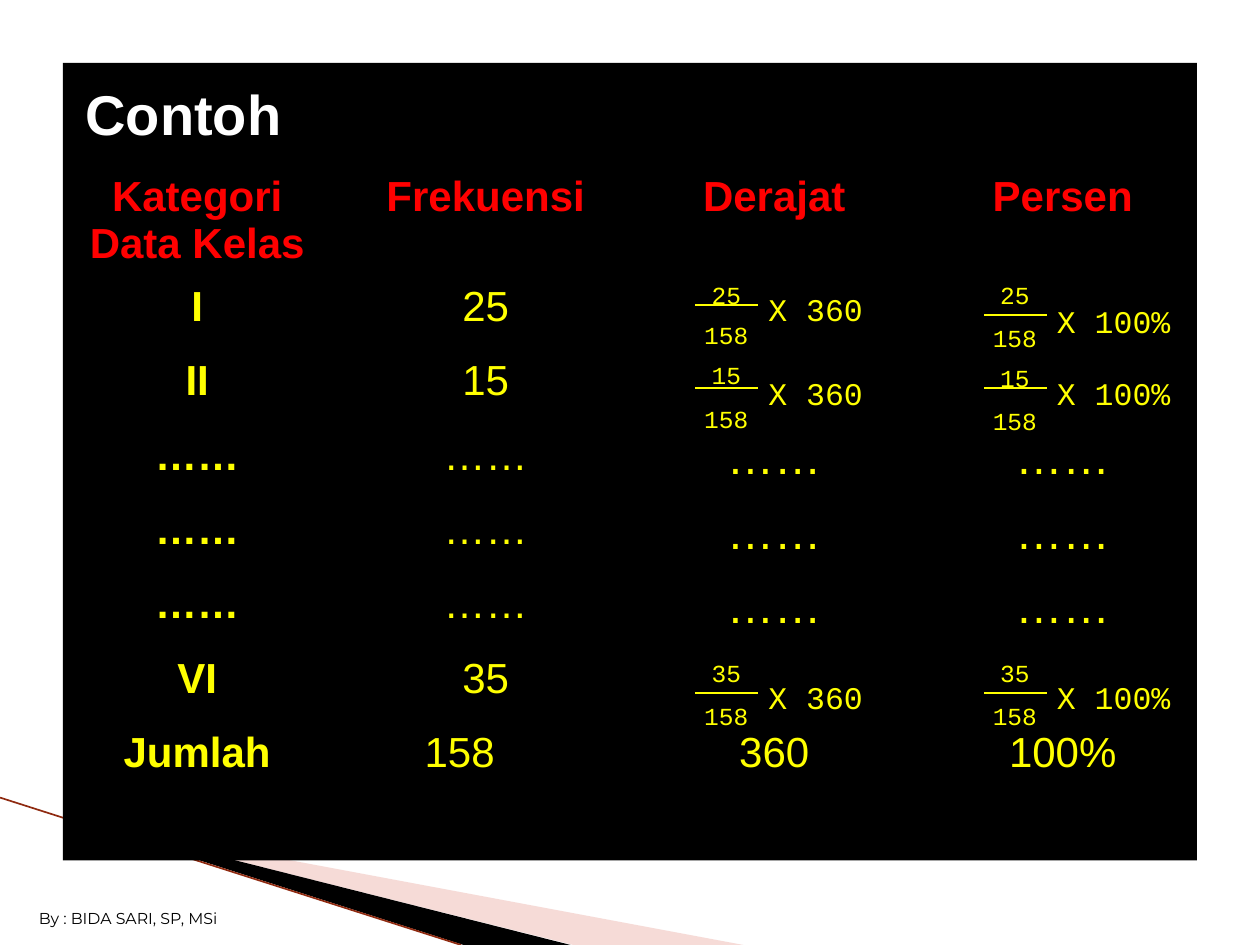
from dataclasses import dataclass

from lxml.etree import SubElement
from pptx import Presentation
from pptx.dml.color import RGBColor
from pptx.enum.shapes import MSO_CONNECTOR, MSO_SHAPE
from pptx.enum.text import PP_ALIGN
from pptx.oxml.ns import qn
from pptx.util import Emu, Inches, Pt

SLIDE_WIDTH, SLIDE_HEIGHT = Inches(10), Inches(7.5)
GRID_COLUMNS, GRID_ROWS = 10, 7.5
TABLE_LEFT, TABLE_TOP = 0.42, 1.33
TABLE_COLUMN, HEADER_ROW, BODY_ROW = 2.29, 0.87, 0.59
BLACK, WHITE, RED, YELLOW = "000000", "FFFFFF", "FF0000", "FFFF00"
NO_TABLE_STYLE = "{2D5ABB26-0587-4C30-8999-92F81FD0307C}"


@dataclass(frozen=True)
class TextStyle:
    size: float
    color: str
    font: str = "Arial"
    bold: bool = False
    align: PP_ALIGN = PP_ALIGN.LEFT
    space_before: float = 0


@dataclass(frozen=True)
class Fraction:
    column: int
    numerator: str
    factor: str
    top: float
    rule: float
    factor_top: float
    factor_width: float
    gap: float = 8


@dataclass(frozen=True)
class Wedge:
    points: tuple[tuple[float, float], ...]
    color: str
    opacity: int = 100


DOTS = "……"
ROWS = [
    ("Kategori Data Kelas", "Frekuensi", "Derajat", "Persen"),
    ("I", "25", "", ""),
    ("II", "15", "", ""),
    *[(DOTS,) * 4] * 3,
    ("VI", "35", "", ""),
    ("Jumlah", "158", "360", "100%"),
]
FRACTIONS = [
    Fraction(2, "25", "X 360", 2.17, 2.42, 2.25, 1, 6),
    Fraction(2, "15", "X 360", 2.81, 3.08, 2.92, 1),
    Fraction(2, "35", "X 360", 5.17, 5.5, 5.33, 1),
    Fraction(3, "25", "X 100%", 2.17, 2.5, 2.35, 1.3),
    Fraction(3, "15", "X 100%", 2.83, 3.08, 2.92, 1.3),
    Fraction(3, "35", "X 100%", 5.17, 5.5, 5.33, 1.3),
]
WEDGES = [
    Wedge(((0.55, 6.5), (5.9, 7.5), (4.55, 7.5)), "E9A59D", 40),
    Wedge(((0.53, 6.49), (4.53, 7.5), (3.68, 7.5)), BLACK),
]


def across(columns: float) -> Emu:
    return Emu(round(SLIDE_WIDTH * columns / GRID_COLUMNS))


def down(rows: float) -> Emu:
    return Emu(round(SLIDE_HEIGHT * rows / GRID_ROWS))


def rgb(color: str) -> RGBColor:
    return RGBColor.from_string(color)


def write(text_frame, lines: list[str], style: TextStyle) -> None:
    for index, line in enumerate(lines):
        paragraph = text_frame.add_paragraph() if index else text_frame.paragraphs[0]
        paragraph.alignment = style.align
        if index:
            paragraph.space_before = Pt(style.space_before)
        run = paragraph.add_run()
        run.text = line
        run.font.size = Pt(style.size)
        run.font.name = style.font
        run.font.bold = style.bold
        run.font.color.rgb = rgb(style.color)


def add_text(slide, left: float, top: float, width: float, height: float,
             lines: list[str], style: TextStyle, wrap: bool = True) -> None:
    shape = slide.shapes.add_textbox(across(left), down(top), across(width), down(height))
    shape.text_frame.word_wrap = wrap
    write(shape.text_frame, lines, style)


def add_line(slide, start: tuple[float, float], end: tuple[float, float],
             color: str, width: float) -> None:
    connector = slide.shapes.add_connector(
        MSO_CONNECTOR.STRAIGHT, across(start[0]), down(start[1]), across(end[0]), down(end[1]))
    connector.line.color.rgb = rgb(color)
    connector.line.width = Pt(width)
    SubElement(connector._element.spPr, qn("a:effectLst"))


def paint(shape, color: str) -> None:
    shape.fill.solid()
    shape.fill.fore_color.rgb = rgb(color)
    shape.line.fill.background()
    shape.shadow.inherit = False


def add_wedge(slide, wedge: Wedge) -> None:
    points = [(across(x), down(y)) for x, y in wedge.points]
    builder = slide.shapes.build_freeform(*points[0])
    builder.add_line_segments(points[1:], close=True)
    shape = builder.convert_to_shape()
    paint(shape, wedge.color)
    if wedge.opacity < 100:
        color = shape._element.spPr.find(qn("a:solidFill")).find(qn("a:srgbClr"))
        SubElement(color, qn("a:alpha"), val=str(wedge.opacity * 1000))


def cell_style(row: int, column: int) -> TextStyle:
    return TextStyle(
        size=27 if ROWS[row][column] == DOTS and column > 1 else 24,
        color=YELLOW if row else RED,
        bold=row == 0 or column == 0,
        align=PP_ALIGN.CENTER,
    )


def add_frequency_table(slide) -> None:
    body_rows, column_count = len(ROWS) - 1, len(ROWS[0])
    frame = slide.shapes.add_table(
        len(ROWS), column_count, across(TABLE_LEFT), down(TABLE_TOP),
        across(TABLE_COLUMN * column_count), down(HEADER_ROW + BODY_ROW * body_rows))
    table = frame.table
    table.first_row = table.horz_banding = False
    table._tbl.tblPr.find(qn("a:tableStyleId")).text = NO_TABLE_STYLE
    for column in table.columns:
        column.width = across(TABLE_COLUMN)
    for row_index, texts in enumerate(ROWS):
        table.rows[row_index].height = down(BODY_ROW if row_index else HEADER_ROW)
        for column_index, text in enumerate(texts):
            cell = table.cell(row_index, column_index)
            cell.fill.background()
            if text:
                write(cell.text_frame, [text], cell_style(row_index, column_index))
    total = table.cell(body_rows, 1)
    total.margin_left = across(0.66)
    total.text_frame.paragraphs[0].alignment = PP_ALIGN.LEFT


def add_fraction(slide, fraction: Fraction) -> None:
    left = TABLE_LEFT + fraction.column * TABLE_COLUMN
    stacked = TextStyle(14, YELLOW, "Courier New", align=PP_ALIGN.CENTER,
                        space_before=fraction.gap)
    add_text(slide, left + 0.35, fraction.top, 0.83, 0.69, [fraction.numerator, "158"], stacked)
    add_line(slide, (left + 0.52, fraction.rule), (left + 1.02, fraction.rule), YELLOW, 0.75)
    add_text(slide, left + 1, fraction.factor_top, fraction.factor_width, 0.4,
             [fraction.factor], TextStyle(18, YELLOW, "Courier New"))


def main() -> None:
    presentation = Presentation()
    presentation.slide_width, presentation.slide_height = SLIDE_WIDTH, SLIDE_HEIGHT
    slide = presentation.slides.add_slide(presentation.slide_layouts[6])
    for wedge in WEDGES:
        add_wedge(slide, wedge)
    add_line(slide, (0, 6.33), (3.66, 7.5), "8F2A10", 0.95)
    panel = slide.shapes.add_shape(
        MSO_SHAPE.RECTANGLE, across(0.5), down(0.5), across(9), down(6.33))
    paint(panel, BLACK)
    add_frequency_table(slide)
    for fraction in FRACTIONS:
        add_fraction(slide, fraction)
    add_text(slide, 0.58, 0.58, 2.17, 0.64, ["Contoh"], TextStyle(32, WHITE, bold=True))
    add_text(slide, 0.21, 7.16, 1.87, 0.25, ["By : BIDA SARI, SP, MSi"],
             TextStyle(9, BLACK, "Montserrat"), wrap=False)
    presentation.save("out.pptx")


if __name__ == "__main__":
    main()
